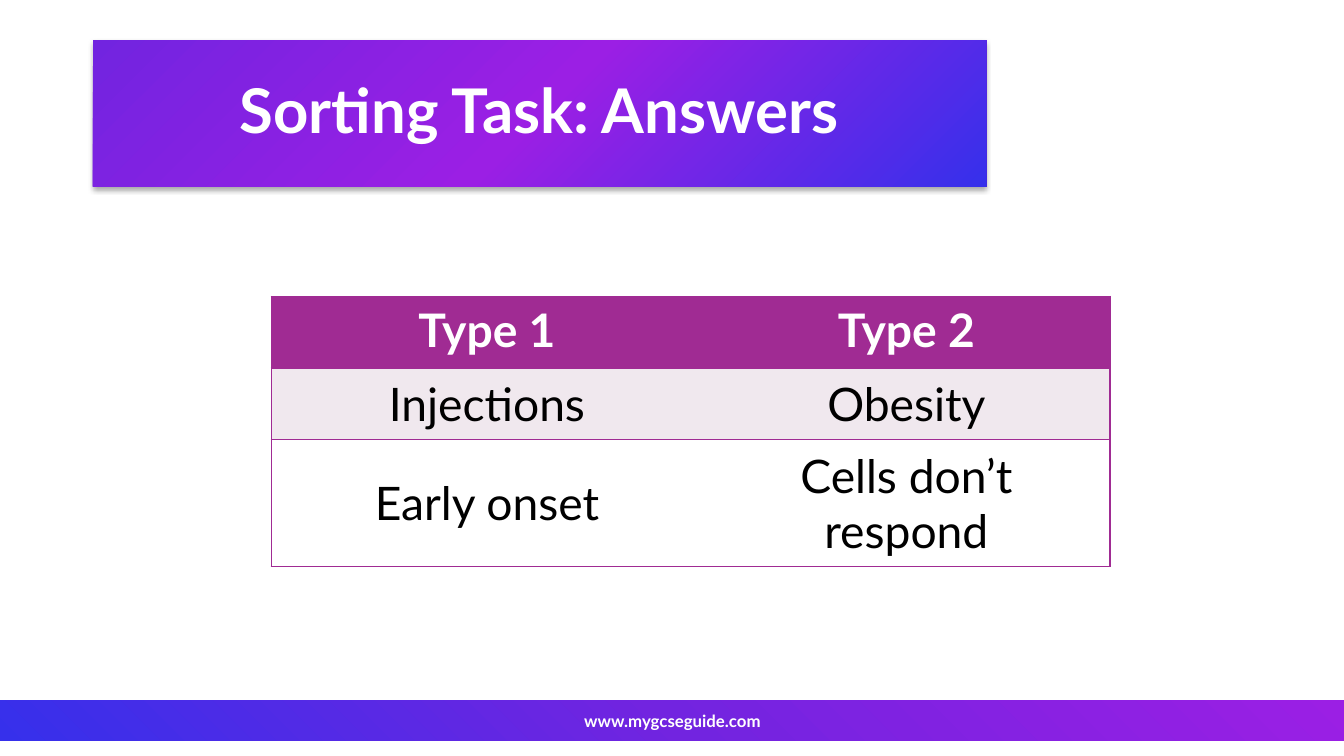
from dataclasses import dataclass

from lxml.etree import SubElement
from pptx import Presentation
from pptx.dml.color import RGBColor
from pptx.enum.shapes import MSO_SHAPE
from pptx.enum.text import MSO_ANCHOR, PP_ALIGN
from pptx.oxml import parse_xml
from pptx.oxml.ns import nsdecls, qn
from pptx.util import Inches, Pt

FONT = "Lato"
BLUE = RGBColor(0x36, 0x30, 0xEB)
VIOLET = RGBColor(0x72, 0x24, 0xE0)
MAGENTA = RGBColor(0x9B, 0x1F, 0xE4)
PLUM = RGBColor(0xA0, 0x2B, 0x93)
PALE_PLUM = RGBColor(0xF0, 0xE8, 0xEE)
WHITE = RGBColor(0xFF, 0xFF, 0xFF)
BLACK = RGBColor(0x00, 0x00, 0x00)
NO_STYLE_NO_GRID = "{2D5ABB26-0587-4C30-8999-92F81FD0307C}"


@dataclass
class AnswerRow:
    type_1: str
    type_2: str
    height: float
    fill: RGBColor
    ink: RGBColor = BLACK
    bold: bool = False
    anchor: MSO_ANCHOR = MSO_ANCHOR.MIDDLE


ANSWERS = [
    AnswerRow("Type 1", "Type 2", 0.71, PLUM, WHITE, True, MSO_ANCHOR.TOP),
    AnswerRow("Injections", "Obesity", 0.71, PALE_PLUM),
    AnswerRow("Early onset", "Cells don’t respond", 1.26, WHITE),
]
COLUMN_WIDTHS = [4.28, 4.04]


def style_text(paragraph, size: float, color: RGBColor, bold: bool = True) -> None:
    paragraph.alignment = PP_ALIGN.CENTER
    font = paragraph.font
    font.name, font.size, font.bold = FONT, Pt(size), bold
    font.color.rgb = color


def fill_gradient(shape, colors: list[RGBColor], angle: float) -> None:
    """Spread the colours evenly; the angle runs counter-clockwise."""
    shape.fill.gradient()
    shape.fill.gradient_angle = angle
    stops = shape.element.spPr.find(qn("a:gradFill")).find(qn("a:gsLst"))
    stops.clear()
    for i, color in enumerate(colors):
        position = 100000 * i // (len(colors) - 1)
        stop = SubElement(stops, qn("a:gs"), pos=str(position))
        SubElement(stop, qn("a:srgbClr"), val=str(color))


def add_borders(cell, sides: str) -> None:
    for i, side in enumerate(sides):
        cell._tc.get_or_add_tcPr().insert(i, parse_xml(
            f'<a:ln{side} {nsdecls("a")} w="{Pt(1)}"><a:solidFill>'
            f'<a:srgbClr val="{PLUM}"/></a:solidFill></a:ln{side}>'))


def add_title(slide) -> None:
    title = slide.shapes.title
    title.left, title.top = Inches(0.92), Inches(0.4)
    title.width, title.height = Inches(8.86), Inches(1.45)
    fill_gradient(title, [VIOLET, MAGENTA, BLUE], 315)
    title.element.spPr.append(parse_xml(
        f'<a:effectLst {nsdecls("a")}><a:outerShdw blurRad="{Pt(3.5)}" '
        f'dist="{Pt(2.2)}" dir="5400000" algn="t" rotWithShape="0">'
        '<a:srgbClr val="000000"><a:alpha val="32000"/></a:srgbClr>'
        '</a:outerShdw></a:effectLst>'))
    title.text_frame.text = "Sorting Task: Answers"
    title.text_frame.vertical_anchor = MSO_ANCHOR.MIDDLE
    heading = title.text_frame.paragraphs[0]
    heading.line_spacing = 0.9
    style_text(heading, 44, WHITE)


def add_footer(slide) -> None:
    top, height = Inches(6.95), Inches(0.4)
    band = slide.shapes.add_shape(
        MSO_SHAPE.RECTANGLE, 0, top, Inches(13.33), height)
    band.shadow.inherit = False
    band.line.fill.background()
    fill_gradient(band, [BLUE, VIOLET, MAGENTA], 45)

    website = slide.shapes.add_textbox(
        Inches(4.42), top, Inches(4.5), height).text_frame
    website.word_wrap = True
    website.vertical_anchor = MSO_ANCHOR.MIDDLE
    website.text = "www.mygcseguide.com"
    style_text(website.paragraphs[0], 12, WHITE)


def add_answers(slide) -> None:
    frame = slide.shapes.add_table(
        len(ANSWERS), len(COLUMN_WIDTHS), Inches(2.69), Inches(2.94),
        Inches(sum(COLUMN_WIDTHS)), Inches(sum(row.height for row in ANSWERS)))
    table = frame.table
    table._tbl.tblPr.find(qn("a:tableStyleId")).text = NO_STYLE_NO_GRID
    for column, width in zip(table.columns, COLUMN_WIDTHS):
        column.width = Inches(width)
    for r, answer in enumerate(ANSWERS):
        table.rows[r].height = Inches(answer.height)
        for c, (text, outer_side) in enumerate(
                [(answer.type_1, "L"), (answer.type_2, "R")]):
            cell = table.cell(r, c)
            cell.text = text
            cell.vertical_anchor = answer.anchor
            cell.margin_left = cell.margin_right = Inches(0.12)
            cell.margin_top = cell.margin_bottom = Inches(0.06)
            cell.fill.solid()
            cell.fill.fore_color.rgb = answer.fill
            add_borders(cell, outer_side + "TB")
            style_text(cell.text_frame.paragraphs[0], 33, answer.ink, answer.bold)


def main() -> None:
    deck = Presentation()
    deck.slide_width, deck.slide_height = Inches(13.33), Inches(7.5)
    title_only = deck.slide_layouts[5]
    slide = deck.slides.add_slide(title_only)
    add_footer(slide)
    add_title(slide)
    add_answers(slide)
    deck.save("out.pptx")


if __name__ == "__main__":
    main()
